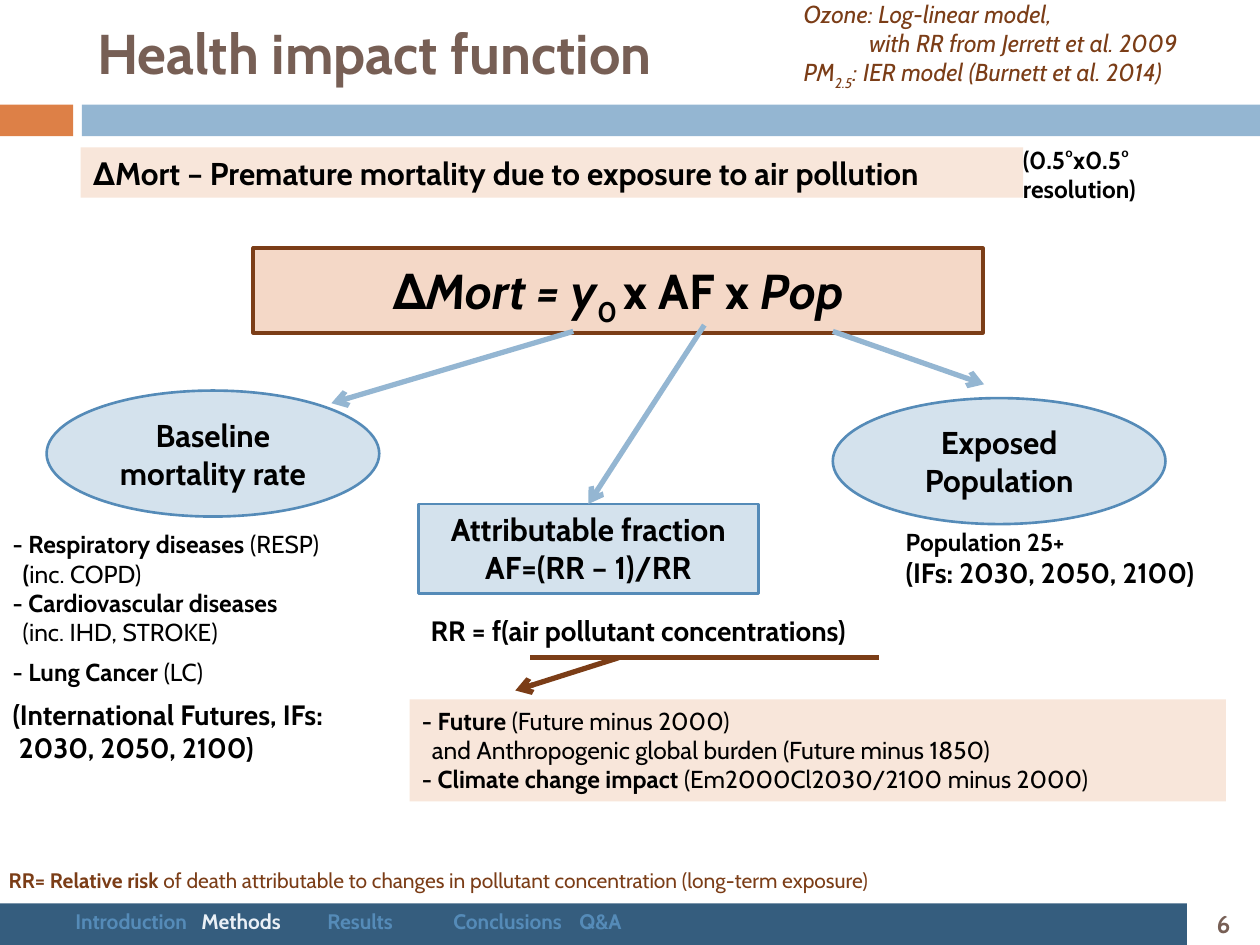
from pptx import Presentation
from pptx.dml.color import RGBColor
from pptx.enum.shapes import MSO_CONNECTOR as Connector, MSO_SHAPE as Shape
from pptx.enum.text import MSO_ANCHOR as Anchor, MSO_AUTO_SIZE as AutoSize, PP_ALIGN as Align
from pptx.oxml.ns import qn
from pptx.util import Inches, Pt
from lxml.etree import SubElement

FONT = "Cabin"
COLORS = {
    "black": "000000", "title": "775F55", "brown": "7B3D17", "orange": "DD8047",
    "sky": "94B6D2", "navy": "355D7E", "steel": "558BB8", "pale_blue": "D4E2ED",
    "peach": "F8E6DA", "clay": "EBB391", "current": "EAF0F6",
}
BOLD, ITALIC, SUB = "bold", "italic", "sub"


def color(name):
    return RGBColor.from_string(COLORS[name])


def place(shape, box):
    shape.left, shape.top, shape.width, shape.height = map(Inches, box)


def add_run(paragraph, text, *styles):
    run = paragraph.add_run()
    run.text = text
    if BOLD in styles:
        run.font.bold = True
    if ITALIC in styles:
        run.font.italic = True
    if SUB in styles:
        run.font._element.set("baseline", "-25000")
    return run


def write(shape, lines, size, ink="black", bold=None, italic=None,
          align=Align.LEFT, anchor=Anchor.TOP):
    frame = shape.text_frame
    frame.word_wrap = True
    frame.auto_size = AutoSize.NONE
    frame.vertical_anchor = anchor
    for index, line in enumerate(lines):
        line = {"runs": [(line,)]} if isinstance(line, str) else line
        paragraph = frame.paragraphs[0] if index == 0 else frame.add_paragraph()
        paragraph.alignment = align
        paragraph.space_before = Pt(line.get("before", 0))
        font = paragraph.font
        font.name, font.size = FONT, Pt(line.get("size", size))
        font.bold, font.italic = line.get("bold", bold), italic
        font.color.rgb = color(ink)
        properties = paragraph._p.get_or_add_pPr()
        properties.set("marL", str(Inches(line.get("indent", 0))))
        properties.set("indent", "0")
        properties.insert_element_before(
            properties.makeelement(qn("a:buNone"), {}), "a:tabLst", "a:defRPr")
        for run in line["runs"]:
            add_run(paragraph, *run)
    return shape


def add_text(slide, box, lines, size, **style):
    return write(slide.shapes.add_textbox(*map(Inches, box)), lines, size, **style)


def add_block(slide, kind, box, fill, outline=None, width=1.5):
    block = slide.shapes.add_shape(kind, *map(Inches, box))
    block.shadow.inherit = False
    block.fill.solid()
    block.fill.fore_color.rgb = color(fill)
    if outline:
        block.line.color.rgb = color(outline)
        block.line.width = Pt(width)
    else:
        block.line.fill.background()
    return block


def add_line(slide, start, end, ink, arrow=True):
    line = slide.shapes.add_connector(Connector.STRAIGHT, *map(Inches, start + end))
    line.line.color.rgb = color(ink)
    line.line.width = Pt(3)
    if arrow:
        SubElement(line.line._get_or_add_ln(), qn("a:tailEnd"), type="arrow")
    SubElement(line._element.spPr, qn("a:effectLst"))
    return line


def add_navigation(slide, sections, current):
    bar = add_text(slide, (0, 7.16, 10, 0.3), [{"runs": []}], 12, ink="steel", bold=True)
    paragraph = bar.text_frame.paragraphs[0]
    properties = paragraph._p.get_or_add_pPr()
    tabs = properties.makeelement(qn("a:tabLst"), {})
    properties.insert_element_before(tabs, "a:defRPr")
    for section, position in sections:
        SubElement(tabs, qn("a:tab"), pos=str(Inches(position)), algn="l")
        run = add_run(paragraph, "\t" + section)
        if section == current:
            run.font.color.rgb = color("current")


def add_frame(slide):
    for box, fill in [((0.65, 0.83, 9.35, 0.25), "sky"),
                      ((0, 7.17, 9.42, 0.33), "navy"),
                      ((0, 0.83, 0.58, 0.25), "orange")]:
        add_block(slide, Shape.RECTANGLE, box, fill)
    add_text(slide, (9.42, 7.17, 0.58, 0.33), ["6"], 14, ink="title", bold=True,
             align=Align.CENTER, anchor=Anchor.MIDDLE)
    add_navigation(slide, [("Introduction", 0.41), ("Methods", 1.86), ("Results", 4),
                           ("Conclusions", 5.07), ("Q&A", 6.5)], "Methods")


def add_equation(slide):
    equation = add_block(slide, Shape.RECTANGLE, (2.01, 1.97, 5.79, 0.67),
                         "clay", "brown", 2.25)
    tint = equation._element.spPr.find(qn("a:solidFill"))[0]
    SubElement(tint, qn("a:alpha"), val="50000")
    equation.text_frame.margin_top = equation.text_frame.margin_bottom = Inches(0.1)
    write(equation, [{"runs": [("∆",), ("Mort = y", ITALIC), ("0 ", SUB),
                               ("x AF x ",), ("Pop", ITALIC)]}],
          28, bold=True, align=Align.CENTER)


def add_factors(slide):
    fraction = add_block(slide, Shape.RECTANGLE, (3.32, 4, 2.7, 0.71), "pale_blue", "steel")
    write(fraction, ["Attributable fraction", "AF=(RR – 1)/RR"], 18, bold=True,
          align=Align.CENTER)
    for label, left, top in [("Baseline mortality rate", 0.37, 3.1),
                             ("Exposed Population", 6.61, 3.16)]:
        factor = add_block(slide, Shape.OVAL, (left, top, 2.64, 1), "pale_blue", "steel")
        write(factor, [label], 18, bold=True, align=Align.CENTER, anchor=Anchor.MIDDLE)
    add_line(slide, (4.55, 2.63), (2.63, 3.2), "sky")
    add_line(slide, (6.61, 2.63), (7.81, 3.05), "sky")
    add_line(slide, (5.59, 2.58), (4.67, 4), "sky").end_connect(fraction, 0)


def add_diseases(placeholder):
    place(placeholder, (0, 4.15, 3.04, 1.99))
    write(placeholder, [
        {"runs": [("- Respiratory diseases", BOLD), (" (RESP)",)]},
        {"runs": [("(", BOLD), ("inc. COPD)",)], "indent": 0.08},
        {"runs": [("- Cardiovascular diseases",)], "bold": True},
        {"runs": [("(inc. IHD, STROKE)",)], "indent": 0.08},
        {"runs": [("- Lung Cancer ", BOLD), ("(LC)",)], "before": 6},
        {"runs": [("(International Futures, IFs:",)], "bold": True, "size": 16, "before": 6},
        {"runs": [("2030, 2050, 2100)",)], "bold": True, "size": 16, "indent": 0.05},
    ], 14)


def add_scenarios(slide):
    add_text(slide, (3.32, 4.82, 3.97, 0.37), ["RR = f(air pollutant concentrations)"],
             16, bold=True)
    scenarios = add_block(slide, Shape.RECTANGLE, (3.25, 5.55, 6.48, 0.81), "peach")
    write(scenarios, [
        {"runs": [("- Future ", BOLD), ("(Future minus 2000)",)]},
        {"runs": [("and Anthropogenic global burden (Future minus 1850)",)], "indent": 0.08},
        {"runs": [("- Climate change impact ", BOLD), ("(Em2000Cl2030/2100 minus 2000)",)]},
    ], 14)
    add_line(slide, (4.91, 5.22), (4.09, 5.48), "brown")
    add_line(slide, (4.21, 5.22), (6.98, 5.22), "brown", arrow=False)


def add_notes_on_method(slide):
    definition = add_block(slide, Shape.RECTANGLE, (0.64, 1.17, 7.48, 0.4), "peach")
    write(definition, ["∆Mort – Premature mortality due to exposure to air pollution"],
          18, bold=True)
    add_text(slide, (8.02, 1.1, 1.21, 0.57), ["(0.5°x0.5°", "resolution)"], 14, bold=True)
    add_text(slide, (6.28, -0.06, 3.71, 0.81), [
        "Ozone: Log-linear model,",
        {"runs": [("with RR from Jerrett et al. 2009",)], "indent": 0.52},
        {"runs": [("PM",), ("2.5", SUB), (": IER model (Burnett et al. 2014)",)]},
    ], 14, ink="brown", italic=True)
    add_text(slide, (7.09, 4.13, 2.56, 0.61), [
        "Population 25+",
        {"runs": [("(IFs: 2030, 2050, 2100)",)], "size": 16},
    ], 14, bold=True)
    add_text(slide, (-0.03, 6.84, 7.49, 0.3), [{"runs": [
        ("RR= Relative risk ", BOLD),
        ("of death attributable to changes in pollutant concentration (long-term exposure)",),
    ]}], 12, ink="brown")


def main():
    presentation = Presentation()
    presentation.slide_width, presentation.slide_height = Inches(10), Inches(7.5)
    slide = presentation.slides.add_slide(presentation.slide_layouts[1])
    title, diseases = slide.placeholders
    place(title, (0.67, 0, 8.92, 0.83))
    write(title, ["Health impact function"], 32, ink="title", bold=True, anchor=Anchor.MIDDLE)
    add_frame(slide)
    add_equation(slide)
    add_factors(slide)
    add_diseases(diseases)
    add_scenarios(slide)
    add_notes_on_method(slide)
    presentation.save("out.pptx")


if __name__ == "__main__":
    main()
